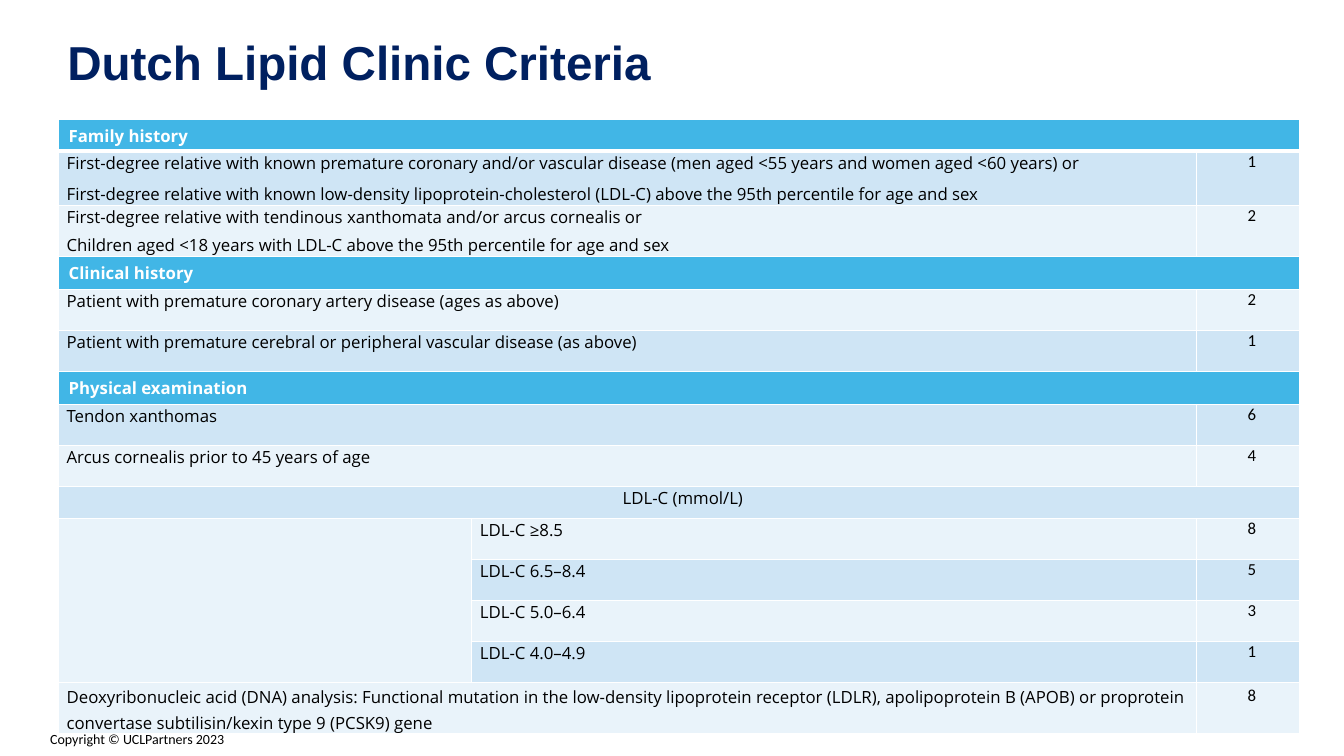
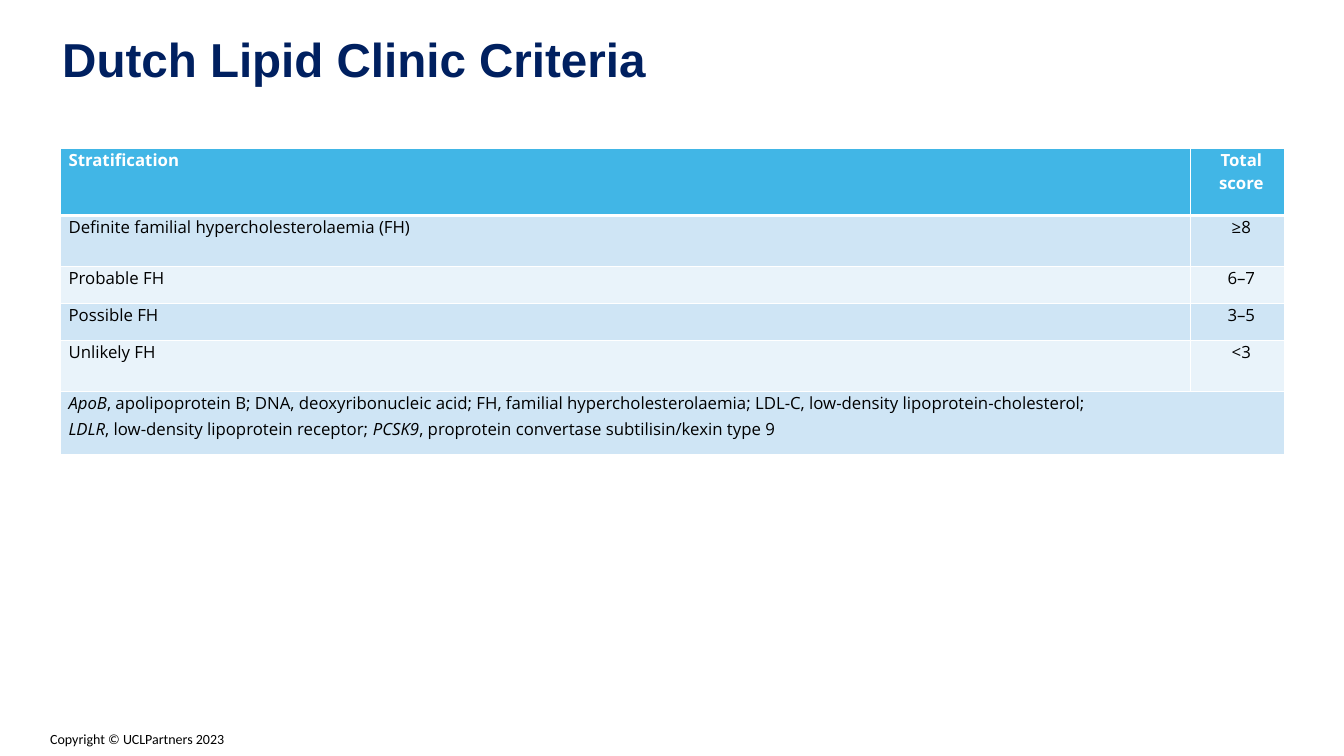
from typing import NamedTuple

from lxml import etree
from pptx import Presentation
from pptx.dml import color
from pptx.enum import text as txt
from pptx.oxml import ns
from pptx.util import Pt

COLORS = {
    "navy": "002060",
    "header": "41B6E6",
    "odd": "CFE5F5",
    "even": "E9F3FA",
    "white": "FFFFFF",
    "black": "000000",
}
LEFT, CENTER = txt.PP_ALIGN.LEFT, txt.PP_ALIGN.CENTER
TITLE = "Dutch Lipid Clinic Criteria"
COPYRIGHT = "Copyright © UCLPartners 2023"


class Row(NamedTuple):
    """A table row; a None cell is merged into the cell to its left."""
    height: float
    cells: tuple
    header: bool = False
    center: bool = False
    gap: float = 3.5
    spacing: float = None


def rgb(name):
    return color.RGBColor.from_string(COLORS[name])


def write(frame, content, font="Open Sans", size=12, fill="black", bold=False,
          align=LEFT, gap=0, spacing=None):
    """Fill a frame, one paragraph a line; text between asterisks is italic."""
    for number, line in enumerate(content.split("\n")):
        para = frame.add_paragraph() if number else frame.paragraphs[0]
        para.alignment = align
        if number:
            para.space_before = Pt(gap)
        if spacing:
            para.line_spacing = spacing
        for part, words in enumerate(line.split("*")):
            if words:
                span = para.add_run()
                span.text = words
                span.font.name = font
                span.font.size = Pt(size)
                span.font.bold = bold
                span.font.italic = part % 2 == 1
                span.font.color.rgb = rgb(fill)


def set_borders(cell, **widths):
    """Draw white borders; widths are keyed by side (L, R, T, B)."""
    properties = cell._tc.get_or_add_tcPr()
    for place, side in enumerate("LRTB"):
        line = etree.Element(ns.qn(f"a:ln{side}"), w=str(Pt(widths.get(side, 1))))
        solid = etree.SubElement(line, ns.qn("a:solidFill"))
        etree.SubElement(solid, ns.qn("a:srgbClr"), val=COLORS["white"])
        properties.insert(place, line)


class Deck:
    def __init__(self):
        self.file = Presentation()
        self.file.slide_width, self.file.slide_height = Pt(960), Pt(540)
        self.page = None

    def add_page(self, left, top):
        """Start a slide with the shared footer and its title at left, top."""
        self.page = self.file.slides.add_slide(self.file.slide_layouts[6])
        self.add_text(COPYRIGHT, 28.8, 518.4, 141, 19.4, wrap=False,
                      font="Calibri", size=10)
        self.add_text(TITLE, left, top, 750, 46, font="Arial", size=34,
                      fill="navy", bold=True, spacing=0.9)

    def add_text(self, content, left, top, width, height, wrap=True, **style):
        box = self.page.shapes.add_textbox(Pt(left), Pt(top), Pt(width), Pt(height))
        box.text_frame.word_wrap = wrap
        write(box.text_frame, content, **style)

    def add_table(self, left, top, widths, rows, header_inset=(5.8, 0),
                  score_font="Open Sans"):
        """Add a banded table whose last column holds centred scores."""
        table = self.page.shapes.add_table(
            len(rows), len(widths), Pt(left), Pt(top), Pt(sum(widths)),
            Pt(sum(row.height for row in rows))).table
        table.first_row = table.horz_banding = False
        for column, width in zip(table.columns, widths):
            column.width = Pt(width)
        for index, row in enumerate(rows):
            table.rows[index].height = Pt(row.height)
            band = "header" if row.header else ("even", "odd")[index % 2]
            for place, content in enumerate(row.cells):
                cell = table.cell(index, place)
                cell.fill.solid()
                cell.fill.fore_color.rgb = rgb(band)
                set_borders(cell, T=3 if index == 1 else 1, B=1 if index else 3)
                inset = header_inset if row.header and content else (5.8, 0)
                cell.margin_left, cell.margin_right = Pt(inset[0]), 0
                cell.margin_top = cell.margin_bottom = Pt(inset[1])
                if content:
                    score = place == len(widths) - 1
                    write(cell.text_frame, content,
                          font=score_font if score else "Open Sans",
                          fill="white" if row.header else "black",
                          bold=row.header,
                          align=CENTER if score or row.center else LEFT,
                          gap=row.gap, spacing=row.spacing)
            self.merge_across(table, index, row.cells)
        return table

    @staticmethod
    def merge_across(table, index, cells):
        start = 0
        for place in range(1, len(cells) + 1):
            if place == len(cells) or cells[place] is not None:
                if place - start > 1:
                    table.cell(index, start).merge(table.cell(index, place - 1))
                start = place


CRITERIA = [
    Row(23, ("Family history", None, None), header=True),
    Row(39, ("First-degree relative with known premature coronary and/or vascular "
             "disease (men aged <55 years and women aged <60 years) or\n"
             "First-degree relative with known low-density lipoprotein-cholesterol "
             "(LDL-C) above the 95th percentile for age and sex", None, "1"), gap=6.2),
    Row(36.4, ("First-degree relative with tendinous xanthomata and/or arcus cornealis or\n"
               "Children aged <18 years with LDL-C above the 95th percentile "
               "for age and sex", None, "2")),
    Row(23.5, ("Clinical history", None, None), header=True),
    Row(29.3, ("Patient with premature coronary artery disease (ages as above)", None, "2")),
    Row(29.3, ("Patient with premature cerebral or peripheral vascular disease (as above)",
               None, "1")),
    Row(23.5, ("Physical examination", None, None), header=True),
    Row(29.3, ("Tendon xanthomas", None, "6")),
    Row(29.3, ("Arcus cornealis prior to 45 years of age", None, "4")),
    Row(22.9, ("LDL-C (mmol/L)", None, None), center=True),
    Row(29.3, ("", "LDL-C ≥8.5", "8")),
    Row(29.3, ("", "LDL-C 6.5–8.4", "5")),
    Row(29.3, ("", "LDL-C 5.0–6.4", "3")),
    Row(29.3, ("", "LDL-C 4.0–4.9", "1")),
    Row(36.7, ("Deoxyribonucleic acid (DNA) analysis: Functional mutation in the low-density "
               "lipoprotein receptor (LDLR), apolipoprotein B (APOB) or proprotein convertase "
               "subtilisin/kexin type 9 (PCSK9) gene", None, "8"), spacing=1.13),
]

STRATIFICATION = [
    Row(48, ("Stratification", "Total score"), header=True),
    Row(36.5, ("Definite familial hypercholesterolaemia (FH)", "≥8")),
    Row(26.5, ("Probable FH", "6–7")),
    Row(26.5, ("Possible FH", "3–5")),
    Row(36.5, ("Unlikely FH", "<3")),
    Row(44.8, ("*ApoB*, apolipoprotein B; DNA, deoxyribonucleic acid; FH, familial "
               "hypercholesterolaemia; LDL-C, low-density lipoprotein-cholesterol;\n"
               "*LDLR*, low-density lipoprotein receptor; *PCSK9*, proprotein convertase "
               "subtilisin/kexin type 9", None), gap=1.9),
]


def main():
    deck = Deck()
    deck.add_page(41, 24.5)
    criteria = deck.add_table(41.8, 85, (295.2, 517.6, 73.4), CRITERIA,
                              header_inset=(7.2, 3.6), score_font="Calibri")
    ldl_rows = [index for index, row in enumerate(CRITERIA) if row.cells[0] == ""]
    criteria.cell(ldl_rows[0], 0).merge(criteria.cell(ldl_rows[-1], 0))

    deck.add_page(37.4, 22.3)
    deck.add_table(43.2, 106, (807.1, 67), STRATIFICATION)
    deck.file.save("out.pptx")


if __name__ == "__main__":
    main()
